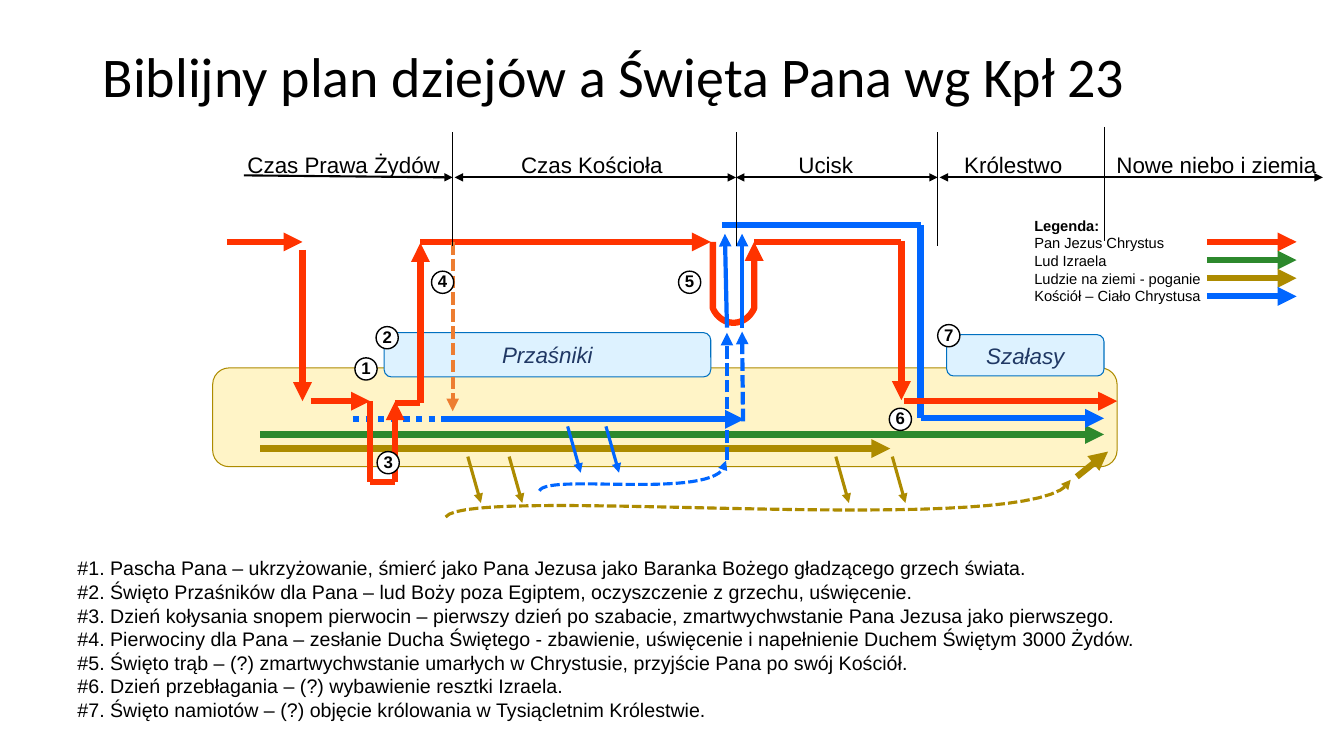
from lxml import etree
from pptx import Presentation
from pptx.dml.color import RGBColor
from pptx.enum.dml import MSO_LINE
from pptx.enum.shapes import MSO_CONNECTOR, MSO_SHAPE
from pptx.enum.text import MSO_ANCHOR, PP_ALIGN
from pptx.oxml.ns import qn
from pptx.util import Inches, Pt

STRAIGHT = MSO_CONNECTOR.STRAIGHT
ROUNDED, OVAL = MSO_SHAPE.ROUNDED_RECTANGLE, MSO_SHAPE.OVAL
DASH, DOT = MSO_LINE.SQUARE_DOT, MSO_LINE.ROUND_DOT
TOP, MIDDLE = MSO_ANCHOR.TOP, MSO_ANCHOR.MIDDLE
LEFT, CENTER = PP_ALIGN.LEFT, PP_ALIGN.CENTER

COLORS = {
    "black": "000000", "white": "FFFFFF", "navy": "203864",
    "christ": "FF3300", "israel": "2D892D", "nations": "AD8B00",
    "church": "0066FF", "spirit": "ED7D31",
    "earth": "FFF4C7", "feast": "DDF2FF", "feast_edge": "0070C0",
}


def color(name):
    return RGBColor.from_string(COLORS[name])


def bezier(start, control_1, control_2, end, steps=32):
    """Points along a cubic curve, without its start."""
    points = []
    for step in range(1, steps + 1):
        t = step / steps
        weights = ((1 - t) ** 3, 3 * t * (1 - t) ** 2, 3 * t * t * (1 - t), t ** 3)
        corners = (start, control_1, control_2, end)
        points.append(tuple(sum(w * c[axis] for w, c in zip(weights, corners))
                            for axis in (0, 1)))
    return points


class Diagram:
    font = "Arial"

    def __init__(self, slide):
        self.shapes = slide.shapes

    def style_line(self, shape, name, width, dash=None, head=False, tail=False):
        shape.line.color.rgb = color(name)
        shape.line.width = Pt(width)
        if dash is not None:
            shape.line.dash_style = dash
        ln = shape.line._get_or_add_ln()
        for tag, wanted in (("a:headEnd", head), ("a:tailEnd", tail)):
            if wanted:
                etree.SubElement(ln, qn(tag), type="triangle")

    def line(self, start, end, name, width=4.5, **ends):
        connector = self.shapes.add_connector(
            STRAIGHT, *(Inches(v) for v in (*start, *end)))
        self.style_line(connector, name, width, **ends)
        etree.SubElement(connector._element.spPr, qn("a:effectLst"))

    def arrow(self, start, end, name, width=4.5, dash=None):
        self.line(start, end, name, width, dash=dash, tail=True)

    def curve(self, points, name, width, dash=None):
        (x, y), *others = [(Inches(px), Inches(py)) for px, py in points]
        builder = self.shapes.build_freeform(x, y)
        builder.add_line_segments(others, close=False)
        outline = builder.convert_to_shape()
        outline.shadow.inherit = False
        outline.fill.background()
        self.style_line(outline, name, width, dash, tail=True)

    def fill_text(self, shape, rows, size, align=LEFT, anchor=TOP, inset=None,
                  wrap=True, name="black", font=None, bold_rows=(), italic=False,
                  spacing=None):
        frame = shape.text_frame
        frame.word_wrap = wrap
        frame.vertical_anchor = anchor
        if inset is not None:
            frame.margin_left = frame.margin_right = Inches(inset)
            frame.margin_top = frame.margin_bottom = Inches(inset)
        for index, row in enumerate(rows):
            paragraph = frame.add_paragraph() if index else frame.paragraphs[0]
            paragraph.alignment = align
            if spacing:
                paragraph.line_spacing = spacing
            run = paragraph.add_run()
            run.text = row
            run.font.name = font or self.font
            run.font.size = Pt(size)
            run.font.bold = index in bold_rows
            run.font.italic = italic
            run.font.color.rgb = color(name)

    def text(self, box, rows, size, **style):
        self.fill_text(self.shapes.add_textbox(*map(Inches, box)), rows, size, **style)

    def block(self, kind, box, fill, edge, width):
        shape = self.shapes.add_shape(kind, *map(Inches, box))
        shape.shadow.inherit = False
        shape.fill.solid()
        shape.fill.fore_color.rgb = color(fill)
        self.style_line(shape, edge, width)
        return shape

    def feast(self, box, label):
        shape = self.block(ROUNDED, box, "feast", "feast_edge", 0.75)
        self.fill_text(shape, [label], 16, align=CENTER, anchor=MIDDLE, wrap=False,
                       name="navy", italic=True)

    def marker(self, number, left, top):
        shape = self.block(OVAL, (left, top, 0.22, 0.22), "white", "black", 1)
        self.fill_text(shape, [str(number)], 12, align=CENTER, anchor=MIDDLE,
                       inset=0, wrap=False, bold_rows=(0,), spacing=0.9)


def main():
    prs = Presentation()
    prs.slide_width, prs.slide_height = Inches(13.33), Inches(7.5)
    slide = prs.slides.add_slide(prs.slide_layouts[6])
    plan = Diagram(slide)

    # Title
    plan.text((0.92, 0.4, 11.5, 0.78), ["Biblijny plan dziejów a Święta Pana wg Kpł 23"],
              40, anchor=MIDDLE, font="Calibri", spacing=0.9)

    # Earth band and feasts
    plan.block(ROUNDED, (2.11, 3.65, 8.97, 0.98), "earth", "nations", 0.75)
    plan.feast((9.39, 3.32, 1.56, 0.41), "Szałasy")
    plan.feast((3.81, 3.3, 3.24, 0.44), "Przaśniki")

    # Nations and Israel
    plan.arrow((2.58, 4.45), (8.83, 4.45), "nations")
    plan.arrow((2.58, 4.31), (10.95, 4.31), "israel")
    plan.arrow((10.68, 4.73), (10.99, 4.48), "nations")
    plan.curve([(4.42, 5.13)] + bezier((4.42, 5.13), (4.65, 4.79), (10.4, 5.38),
                                       (10.62, 4.76)), "nations", 2.25, DASH)

    # Descent for the Church
    plan.curve([(7.07, 2.4), (7.07, 3.06)]
               + bezier((7.07, 3.06), (7.16, 3.25), (7.39, 3.25), (7.48, 3.06))
               + [(7.48, 2.4)], "christ", 4.5)

    # Church
    plan.line((3.5, 4.16), (4.67, 4.16), "church", dash=DOT)
    plan.arrow((4.41, 4.16), (7.38, 4.16), "church")
    plan.line((7.16, 2.23), (9.13, 2.23), "church")
    plan.line((9.13, 2.23), (9.13, 4.15), "church")
    plan.arrow((9.13, 4.15), (10.95, 4.15), "church")
    plan.curve([(5.35, 4.87)] + bezier((5.35, 4.87), (5.43, 4.68), (7.21, 4.99),
                                       (7.2, 4.57)), "church", 2.25, DASH)
    for start, end, dash in (((7.36, 3.25), (7.36, 2.32), None),
                             ((7.21, 3.25), (7.19, 2.32), None),
                             ((7.37, 4.18), (7.36, 3.29), DASH),
                             ((7.21, 4.56), (7.21, 3.3), DASH)):
        plan.arrow(start, end, "church", 3, dash)

    # Small slanted arrows
    for name, top, lefts in (("nations", 4.53, (4.64, 5.05, 8.29, 8.85)),
                             ("church", 4.23, (5.63, 6.01))):
        for left in lefts:
            plan.arrow((left, top), (left + 0.13, top + 0.46), name, 2.25)

    # Way of Christ
    for start, end in (((2.25, 2.4), (3, 2.4)), ((3, 2.48), (3, 3.98)),
                       ((3.08, 3.98), (3.67, 3.98)), ((3.92, 4.78), (3.92, 3.98)),
                       ((4.17, 4), (4.17, 2.41)), ((4.17, 2.4), (7.05, 2.4)),
                       ((8.94, 2.39), (8.94, 3.97)), ((8.97, 3.98), (11.08, 3.98))):
        plan.arrow(start, end, "christ")
    for start, end in (((3.67, 3.98), (3.67, 4.78)), ((3.67, 4.78), (3.92, 4.78)),
                       ((3.92, 4), (4.17, 4)), ((7.48, 2.4), (8.94, 2.4))):
        plan.line(start, end, "christ")
    plan.arrow((4.49, 2.4), (4.49, 4.08), "spirit", 3, DASH)

    # Numbered feast markers
    for number, (left, top) in enumerate(
            ((3.52, 3.55), (3.73, 3.24), (3.74, 4.48), (4.28, 2.69),
             (6.73, 2.69), (8.82, 4.05), (9.3, 3.22)), start=1):
        plan.marker(number, left, top)

    # Time axis
    for x, top in ((4.49, 1.31), (7.3, 1.31), (9.3, 1.31), (10.95, 1.26)):
        plan.line((x, top), (x, top + 1.13), "black", 0.5)
    plan.arrow((2.42, 1.74), (4.49, 1.76), "black", 1.5)
    for start, end in ((4.51, 7.3), (7.3, 9.3), (9.32, 13.12)):
        plan.line((start, 1.76), (end, 1.76), "black", 1.5, head=True, tail=True)
    for era, left, width in (("Czas Prawa Żydów", 2.33, 2.16),
                             ("Czas Kościoła", 4.91, 1.92), ("Ucisk", 7.62, 1.14),
                             ("Królestwo", 9.43, 1.24),
                             ("Nowe niebo i ziemia", 10.95, 2.23)):
        plan.text((left, 1.46, width, 0.35), [era], 16, align=CENTER,
                  anchor=MIDDLE, inset=0.04)

    # Explanations
    plan.text((0.67, 5.47, 10.87, 1.75), [
        "#1. Pascha Pana – ukrzyżowanie, śmierć jako Pana Jezusa jako Baranka Bożego gładzącego grzech świata.",
        "#2. Święto Przaśników dla Pana – lud Boży poza Egiptem, oczyszczenie z grzechu, uświęcenie.",
        "#3. Dzień kołysania snopem pierwocin – pierwszy dzień po szabacie, zmartwychwstanie Pana Jezusa jako pierwszego.",
        "#4. Pierwociny dla Pana – zesłanie Ducha Świętego - zbawienie, uświęcenie i napełnienie Duchem Świętym 3000 Żydów.",
        "#5. Święto trąb – (?) zmartwychwstanie umarłych w Chrystusie, przyjście Pana po swój Kościół.",
        "#6. Dzień przebłagania – (?) wybawienie resztki Izraela.",
        "#7. Święto namiotów – (?) objęcie królowania w Tysiącletnim Królestwie.",
    ], 14)

    # Legend, grouped
    plan.shapes = slide.shapes.add_group_shape().shapes
    plan.text((10.16, 2.1, 1.99, 0.98), [
        "Legenda:", "Pan Jezus Chrystus", "Lud Izraela",
        "Ludzie na ziemi - poganie", "Kościół – Ciało Chrystusa",
    ], 10.5, bold_rows=(0,))
    for row, name in enumerate(("christ", "israel", "nations", "church")):
        y = 2.4 + row * 0.18
        plan.arrow((11.97, y), (12.86, y), name)

    prs.save("out.pptx")


if __name__ == "__main__":
    main()
